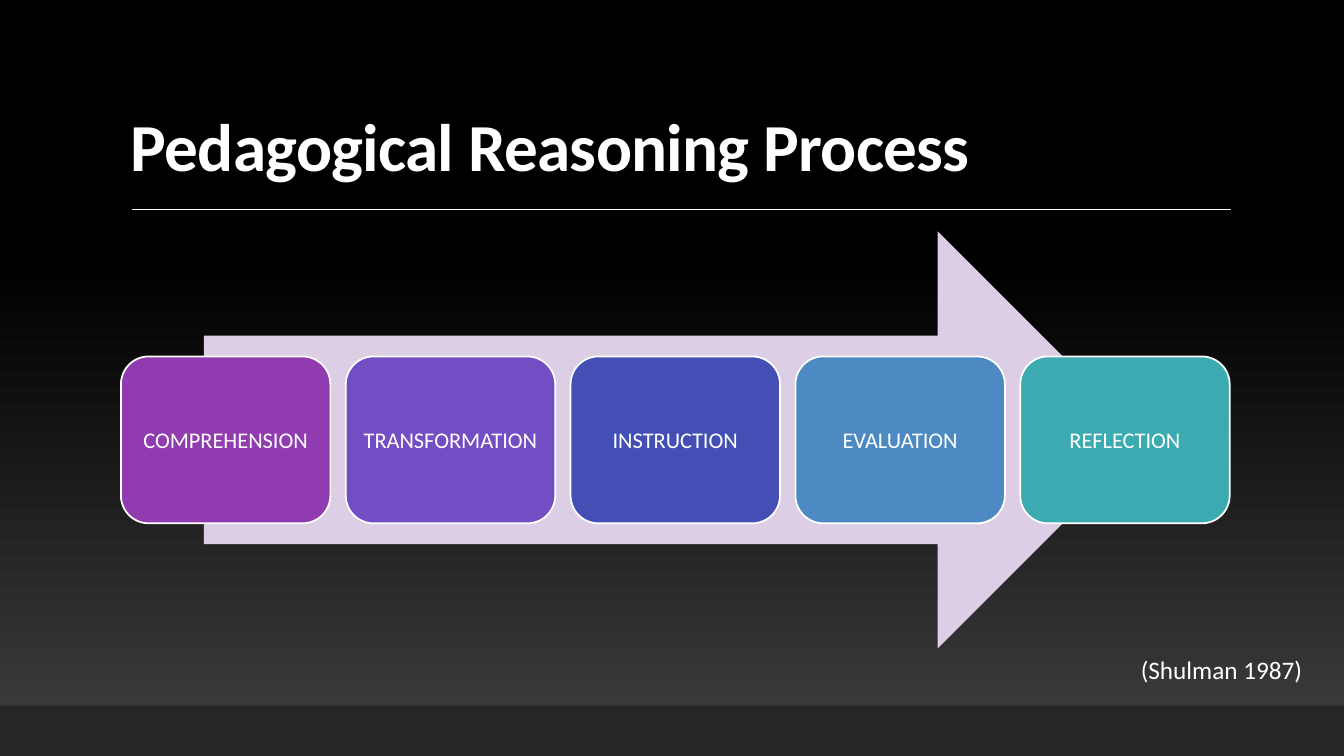
from copy import deepcopy

from lxml import etree
from pptx import Presentation
from pptx import util as u
from pptx.dml.color import RGBColor
from pptx.enum import shapes, text
from pptx.oxml.ns import qn

WHITE = RGBColor(0xFF, 0xFF, 0xFF)
BLACK = RGBColor(0x00, 0x00, 0x00)
GREY = RGBColor(0x3F, 0x3F, 0x3F)
FOOTER = RGBColor(0x26, 0x26, 0x26)
LILAC = RGBColor(0xDC, 0xCE, 0xE4)
PURPLE = RGBColor(0x91, 0x3B, 0xB1)
VIOLET = RGBColor(0x72, 0x4D, 0xC3)
INDIGO = RGBColor(0x43, 0x4F, 0xB5)
BLUE = RGBColor(0x4D, 0x8A, 0xC3)
TEAL = RGBColor(0x3B, 0xAA, 0xB1)

STEPS = [
    ("COMPREHENSION", PURPLE),
    ("TRANSFORMATION", VIOLET),
    ("INSTRUCTION", INDIGO),
    ("EVALUATION", BLUE),
    ("REFLECTION", TEAL),
]


class Deck:
    """Holds the text style and the current slide."""

    font, color = "Calibri", WHITE

    def __init__(self, prs):
        self.s = prs.slides.add_slide(prs.slide_layouts[6])

    def background(self, bottom, top, reach):
        """Fade upwards from bottom to top, complete at the fraction reach."""
        fill = self.s.background.fill
        fill.gradient()
        fill.gradient_angle = 90
        first, last = fill.gradient_stops
        first.color.rgb, last.color.rgb = bottom, top
        first.position, last.position = 0, reach
        stops = self.s.element.find(".//" + qn("a:gsLst"))
        end = deepcopy(stops[-1])
        end.set("pos", "100000")
        stops.append(end)

    def set_text(self, sp, words, size, bold=False, align=text.PP_ALIGN.LEFT):
        p = sp.text_frame.paragraphs[0]
        p.text = words
        p.alignment = align
        p.font.name, p.font.size, p.font.bold = self.font, u.Pt(size), bold
        p.font.color.rgb = self.color
        return p

    def shape(self, kind, x, y, w, h, fill, line=None):
        sp = self.s.shapes.add_shape(kind, *map(u.Pt, (x, y, w, h)))
        sp.shadow.inherit = False
        sp.fill.solid()
        sp.fill.fore_color.rgb = fill
        if line is None:
            sp.line.fill.background()
        else:
            sp.line.color.rgb = line
            sp.line.width = u.Pt(1.25)
        return sp

    def step(self, x, y, w, h, words, fill):
        sp = self.shape(shapes.MSO_SHAPE.ROUNDED_RECTANGLE, x, y, w, h, fill, WHITE)
        tf = sp.text_frame
        tf.vertical_anchor = text.MSO_ANCHOR.MIDDLE
        tf.margin_left = tf.margin_right = u.Pt(5)
        self.set_text(sp, words, 16, align=text.PP_ALIGN.CENTER)

    def rule(self, x1, x2, y):
        c = self.s.shapes.add_connector(
            shapes.MSO_CONNECTOR.STRAIGHT, *map(u.Pt, (x1, y, x2, y)))
        c.line.color.rgb = WHITE
        c.line.width = u.Pt(1)
        etree.SubElement(c.element.spPr, qn("a:effectLst"))

    def title(self, x, y, w, h, words):
        sp = self.s.shapes.add_textbox(*map(u.Pt, (x, y, w, h)))
        sp.text_frame.word_wrap = True
        sp.text_frame.vertical_anchor = text.MSO_ANCHOR.BOTTOM
        p = self.set_text(sp, words, 48, bold=True)
        p.line_spacing = 0.9
        # Letter spacing in hundredths of a point
        sp.element.find(".//" + qn("a:r")).get_or_add_rPr().set("spc", "-50")

    def citation(self, x, y, w, h, words):
        sp = self.s.shapes.add_textbox(*map(u.Pt, (x, y, w, h)))
        sp.text_frame.word_wrap = False
        self.set_text(sp, words, 18)


def main():
    prs = Presentation()
    prs.slide_width, prs.slide_height = u.Pt(960), u.Pt(540)
    deck = Deck(prs)

    # Backdrop and footer band
    deck.background(GREY, BLACK, 0.65)
    deck.shape(shapes.MSO_SHAPE.RECTANGLE, 0, 504, 960, 36, FOOTER)

    # Title with its rule
    deck.rule(94.3, 879, 149.5)
    deck.title(86.4, 22.5, 792, 114.3, "Pedagogical Reasoning Process")

    # Process arrow and its steps
    deck.shape(shapes.MSO_SHAPE.RIGHT_ARROW, 145.6, 165.2, 673.2, 298, LILAC)
    left, pitch = 86.4, 160.6
    for i, (words, fill) in enumerate(STEPS):
        deck.step(left + i * pitch, 254.6, 149.6, 119.2, words, fill)

    # Citation
    deck.citation(807.8, 463.7, 131, 29, "(Shulman 1987)")

    prs.save("out.pptx")


if __name__ == "__main__":
    main()
